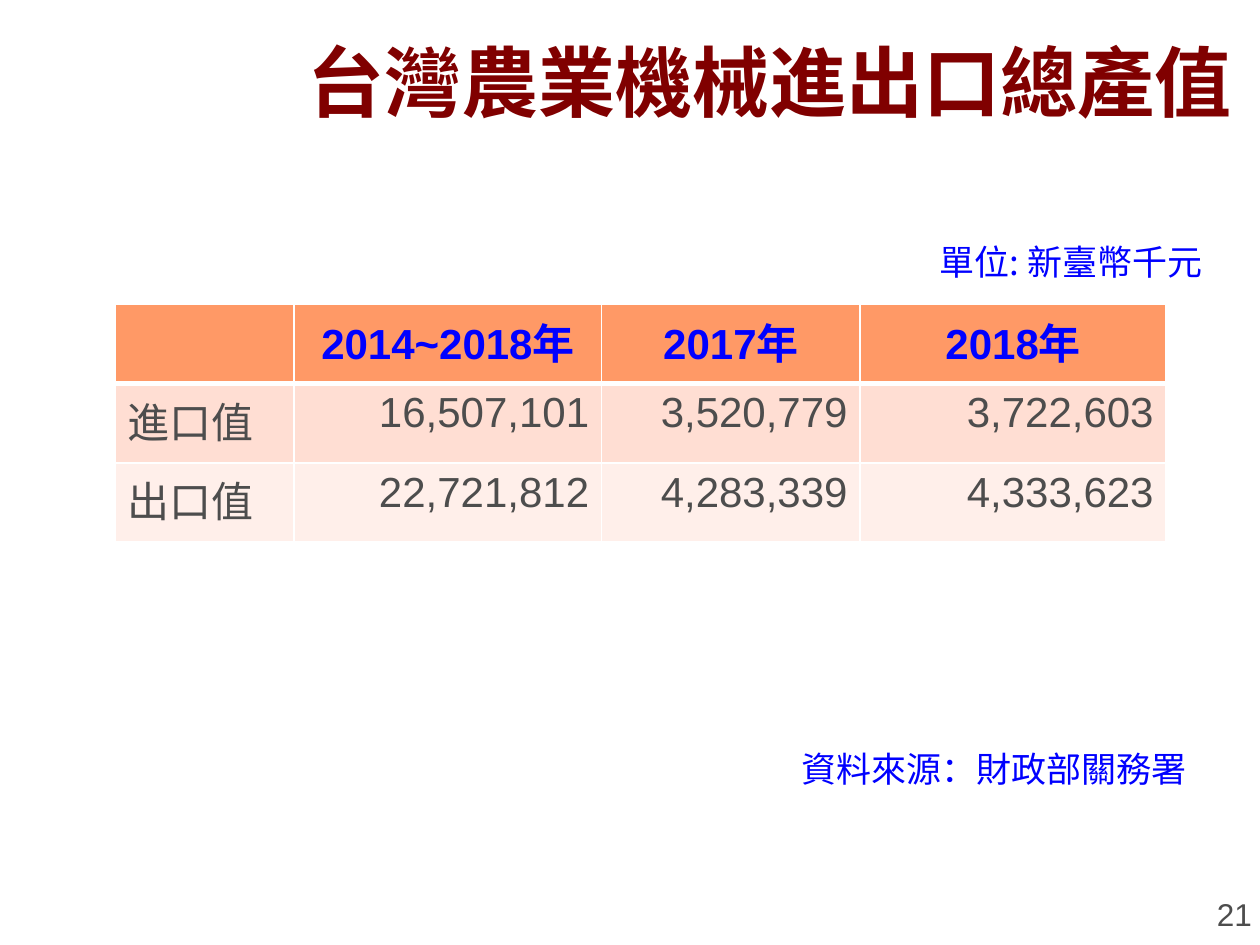
from lxml.etree import SubElement
from pptx import Presentation
from pptx.dml.color import RGBColor
from pptx.enum.text import MSO_ANCHOR, MSO_AUTO_SIZE, PP_ALIGN
from pptx.oxml.ns import qn
from pptx.util import Cm, Pt

COLORS = {
    "title": "800000",
    "accent": "0000FF",
    "body": "4D4D4D",
    "header": "FF9966",
    "bands": ["FFDED3", "FFEFEA"],
    "border": "FFFFFF",
}
LATIN = "Arial"
CHINESE = "Noto Sans CJK SC"

COLUMN_WIDTHS = [3.61, 6.2, 5.21, 6.17]
ROW_HEIGHT = 1.6
ROWS = [
    ["", "2014~2018年", "2017年", "2018年"],
    ["進口值", "16,507,101", "3,520,779", "3,722,603"],
    ["出口值", "22,721,812", "4,283,339", "4,333,623"],
]


class SlideBuilder:
    def __init__(self, presentation):
        self.slide = presentation.slides.add_slide(presentation.slide_layouts[5])

    def add_run(self, paragraph, text, size, color, font=LATIN, bold=False):
        run = paragraph.add_run()
        run.text = text
        run.font.size = Pt(size)
        run.font.bold = bold
        run.font.name = font
        run.font.color.rgb = RGBColor.from_string(color)
        SubElement(run.font._element, qn("a:ea"), typeface=CHINESE)

    def title(self, text, left, top, width, height):
        shape = self.slide.shapes.title
        shape.left, shape.top = Cm(left), Cm(top)
        shape.width, shape.height = Cm(width), Cm(height)
        frame = shape.text_frame
        frame.auto_size = MSO_AUTO_SIZE.NONE
        frame.vertical_anchor = MSO_ANCHOR.MIDDLE
        paragraph = frame.paragraphs[0]
        paragraph.alignment = PP_ALIGN.RIGHT
        self.add_run(paragraph, text, 44, COLORS["title"], bold=True)

    def label(self, text, left, top, width, height, size, color, font=CHINESE):
        shape = self.slide.shapes.add_textbox(Cm(left), Cm(top), Cm(width), Cm(height))
        frame = shape.text_frame
        frame.word_wrap = False
        frame.auto_size = MSO_AUTO_SIZE.SHAPE_TO_FIT_TEXT
        self.add_run(frame.paragraphs[0], text, size, color, font)

    def cell_borders(self, cell, **widths):
        properties = cell._tc.get_or_add_tcPr()
        for side in "LRTB":
            width = Pt(widths.get(side, 1))
            line = SubElement(properties, qn(f"a:ln{side}"), w=str(width))
            fill = SubElement(line, qn("a:solidFill"))
            SubElement(fill, qn("a:srgbClr"), val=COLORS["border"])

    def table(self, rows, left, top):
        shape = self.slide.shapes.add_table(
            len(rows), len(COLUMN_WIDTHS), Cm(left), Cm(top),
            Cm(sum(COLUMN_WIDTHS)), Cm(ROW_HEIGHT * len(rows)))
        table = shape.table
        for column, width in zip(table.columns, COLUMN_WIDTHS):
            column.width = Cm(width)
        for row_index, values in enumerate(rows):
            table.rows[row_index].height = Cm(ROW_HEIGHT)
            for column_index, text in enumerate(values):
                self.fill_cell(table.cell(row_index, column_index), text,
                               row_index, column_index)

    def fill_cell(self, cell, text, row_index, column_index):
        is_header, is_label = row_index == 0, column_index == 0
        # A thick rule separates the header from the first body row
        self.cell_borders(cell, T=3 if row_index == 1 else 1, B=3 if is_header else 1)
        fill = COLORS["header"] if is_header else COLORS["bands"][(row_index - 1) % 2]
        cell.fill.solid()
        cell.fill.fore_color.rgb = RGBColor.from_string(fill)
        paragraph = cell.text_frame.paragraphs[0]
        if is_header:
            paragraph.alignment = PP_ALIGN.CENTER
        else:
            paragraph.alignment = PP_ALIGN.LEFT if is_label else PP_ALIGN.RIGHT
        if text:
            self.add_run(paragraph, text, 24,
                         COLORS["accent"] if is_header else COLORS["body"],
                         CHINESE if is_label else LATIN, is_header)


def main():
    presentation = Presentation()
    presentation.slide_width, presentation.slide_height = Cm(25.4), Cm(19.05)
    builder = SlideBuilder(presentation)

    # Title
    builder.title("台灣農業機械進出口總產值", 3.3, 0.91, 21.8, 1.42)

    # Trade values
    builder.table(ROWS, 2.32, 6.13)

    # Unit, source and page number
    builder.label("單位: 新臺幣千元", 18.69, 4.72, 6.22, 1.12, 20, COLORS["accent"])
    builder.label("資料來源：財政部關務署", 15.9, 14.94, 8.36, 1.12, 20, COLORS["accent"])
    builder.label("21", 24.28, 17.91, 1.22, 1.02, 18, COLORS["body"], LATIN)

    presentation.save("out.pptx")


if __name__ == "__main__":
    main()
